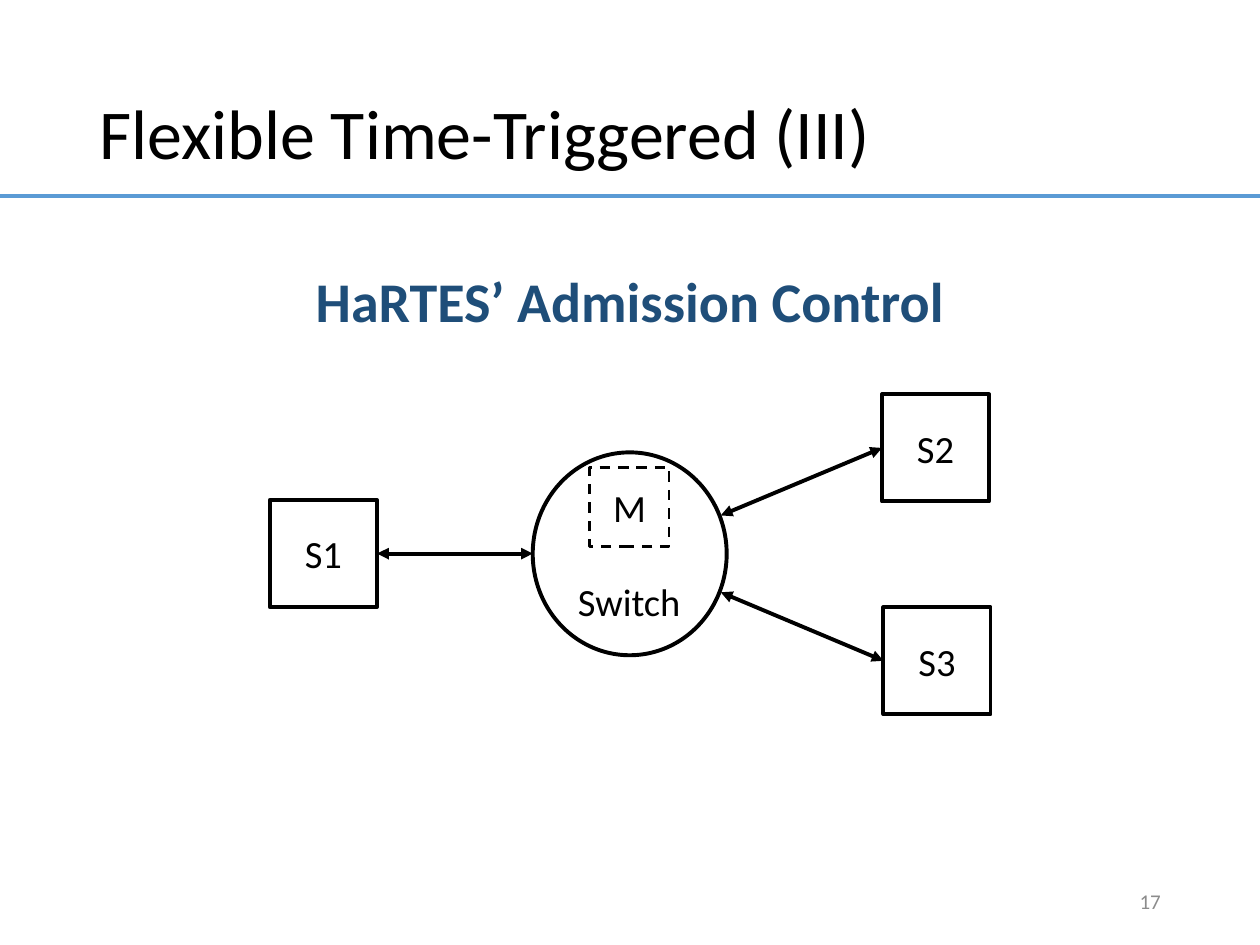
from dataclasses import dataclass

import pptx
import pptx.dml.color
import pptx.enum.dml
import pptx.enum.shapes
import pptx.enum.text
import pptx.oxml.ns
import pptx.util
from lxml import etree
from pptx.util import Cm

BLACK = pptx.dml.color.RGBColor(0x00, 0x00, 0x00)
GREY = pptx.dml.color.RGBColor(0x8C, 0x8C, 0x8C)
RULE_BLUE = pptx.dml.color.RGBColor(0x5B, 0x9B, 0xD5)
HEADING_BLUE = pptx.dml.color.RGBColor(0x1F, 0x4E, 0x79)
FONT = "Calibri"
ALIGN = pptx.enum.text.PP_ALIGN
ANCHOR = pptx.enum.text.MSO_ANCHOR
SHAPE = pptx.enum.shapes.MSO_SHAPE
STATION_SIDE = 2.16
RIGHT_SIDE, LEFT_SIDE = 3, 1


@dataclass(frozen=True)
class Label:
    text: str
    size: float = 22
    color: pptx.dml.color.RGBColor = BLACK
    bold: bool = False
    align: ALIGN = ALIGN.CENTER
    anchor: ANCHOR = ANCHOR.MIDDLE
    spacing: float = 1.0


@dataclass(frozen=True)
class Area:
    left: float
    top: float
    width: float
    height: float

    def lengths(self) -> tuple:
        return Cm(self.left), Cm(self.top), Cm(self.width), Cm(self.height)


@dataclass(frozen=True)
class Station:
    name: str
    left: float
    top: float
    side: int
    switch_x: float
    switch_y: float


STATIONS = (
    Station("S1", 5.44, 10.08, RIGHT_SIDE, 10.74, 11.16),
    Station("S2", 17.78, 7.95, LEFT_SIDE, 14.53, 10.39),
    Station("S3", 17.81, 12.24, LEFT_SIDE, 14.53, 11.94),
)


def write(box, label: Label) -> None:
    frame = box.text_frame
    frame.word_wrap = True
    frame.vertical_anchor = label.anchor
    para = frame.paragraphs[0]
    para.alignment = label.align
    para.line_spacing = label.spacing
    span = para.add_run()
    span.text = label.text
    span.font.name = FONT
    span.font.size = pptx.util.Pt(label.size)
    span.font.bold = label.bold
    span.font.color.rgb = label.color


def add_text(page, area: Area, label: Label) -> None:
    write(page.shapes.add_textbox(*area.lengths()), label)


def add_outline(page, kind: SHAPE, area: Area, weight: float = 2.25):
    shape = page.shapes.add_shape(kind, *area.lengths())
    shape.shadow.inherit = False
    shape.fill.background()
    shape.line.color.rgb = BLACK
    shape.line.width = pptx.util.Pt(weight)
    return shape


def add_line(page, start: tuple, end: tuple, color, arrows: bool = False):
    line = page.shapes.add_connector(
        pptx.enum.shapes.MSO_CONNECTOR.STRAIGHT, *map(Cm, start + end))
    line.line.color.rgb = color
    line.line.width = pptx.util.Pt(2.25)
    if arrows:
        stroke = line.line._get_or_add_ln()
        for tag in ("a:headEnd", "a:tailEnd"):
            etree.SubElement(stroke, pptx.oxml.ns.qn(tag), type="triangle")
    etree.SubElement(line._element.spPr, pptx.oxml.ns.qn("a:effectLst"))
    return line


def add_station(page, station: Station) -> None:
    box = add_outline(page, SHAPE.RECTANGLE,
                      Area(station.left, station.top, STATION_SIDE, STATION_SIDE))
    write(box, Label(station.name))
    switch_end = (station.switch_x, station.switch_y)
    link = add_line(page, switch_end, switch_end, BLACK, arrows=True)
    link.end_connect(box, station.side)


def main() -> None:
    deck = pptx.Presentation()
    deck.slide_width, deck.slide_height = Cm(25.4), Cm(19.05)
    page = deck.slides.add_slide(deck.slide_layouts[5])

    add_line(page, (0, 3.96), (25.4, 3.96), RULE_BLUE)
    title = page.shapes.title
    title.left, title.top, title.width, title.height = Area(1.75, 0.84, 21.9, 3.84).lengths()
    write(title, Label("Flexible Time-Triggered (III)", 40, align=ALIGN.LEFT, spacing=0.9))
    add_text(page, Area(17.93, 17.65, 5.72, 1.02), Label("17", 12, GREY, align=ALIGN.RIGHT))
    add_text(page, Area(4.8, 5.36, 15.8, 1.55),
             Label("HaRTES’ Admission Control", 32, HEADING_BLUE, bold=True, spacing=0.9))

    add_outline(page, SHAPE.OVAL, Area(10.74, 9.12, 3.91, 4.09))
    for station in STATIONS:
        add_station(page, station)
    add_text(page, Area(10.69, 11.53, 3.99, 1.4), Label("Switch", anchor=ANCHOR.TOP))
    master = add_outline(page, SHAPE.RECTANGLE, Area(11.89, 9.42, 1.6, 1.6), 1.5)
    master.line.dash_style = pptx.enum.dml.MSO_LINE.DASH
    write(master, Label("M"))

    deck.save("out.pptx")


if __name__ == "__main__":
    main()
